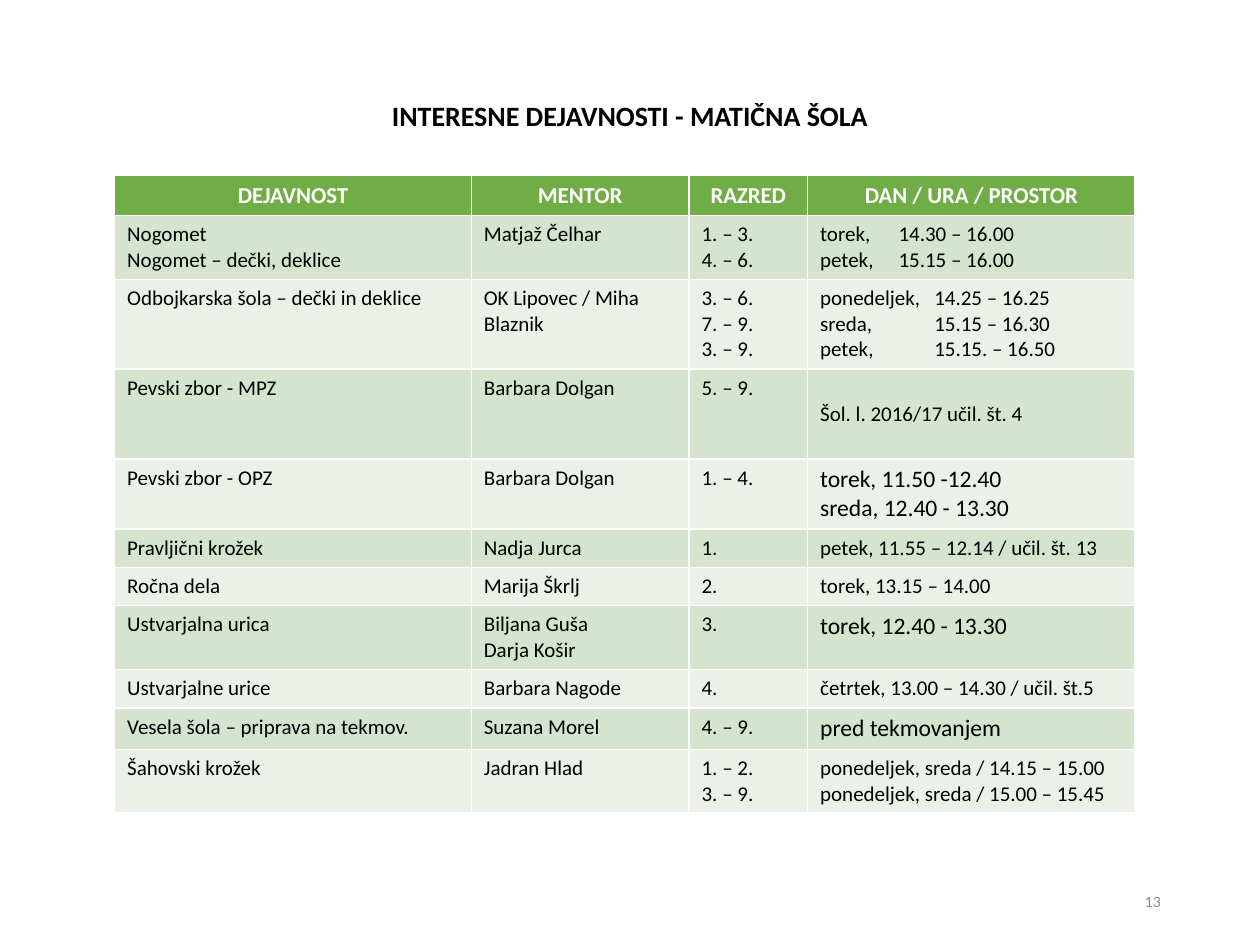
from lxml import etree
from pptx import Presentation, util as u
from pptx.dml.color import RGBColor
from pptx.enum import text
from pptx.oxml.ns import qn

theme = {
    "font": "Calibri",
    "title": {"size": 16, "bold": True, "color": "000000"},
    "header": {"size": 13, "bold": True, "color": "FFFFFF"},
    "body": {"size": 12, "bold": False, "color": "000000"},
    "large": {"size": 13.5, "bold": False, "color": "000000"},
    "number": {"size": 9, "bold": False, "color": "8C8C8C"},
    "header_fill": "70AD47",
    "bands": ["D5E3CF", "EBF1E9"],
}
widths = [7.19, 4.39, 2.39, 6.6]
header = ["DEJAVNOST", "MENTOR", "RAZRED", "DAN / URA / PROSTOR"]
activities = [
    (1.28, "Nogomet\nNogomet – dečki, deklice", "Matjaž Čelhar", "1. – 3.\n4. – 6.",
     "torek,\t14.30 – 16.00\npetek,\t15.15 – 16.00"),
    (1.81, "Odbojkarska šola – dečki in deklice", "OK Lipovec / Miha Blaznik",
     "3. – 6.\n7. – 9.\n3. – 9.",
     "ponedeljek,\t14.25 – 16.25\nsreda,\t15.15 – 16.30\npetek,\t15.15. – 16.50"),
    (1.81, "Pevski zbor - MPZ", "Barbara Dolgan", "5. – 9.", "Šol. l. 2016/17 učil. št. 4"),
    (1.4, "Pevski zbor - OPZ", "Barbara Dolgan", "1. – 4.",
     "torek, 11.50 -12.40\nsreda, 12.40 - 13.30"),
    (0.77, "Pravljični krožek", "Nadja Jurca", "1.", "petek, 11.55 – 12.14 / učil. št. 13"),
    (0.77, "Ročna dela", "Marija Škrlj", "2.", "torek, 13.15 – 14.00"),
    (1.29, "Ustvarjalna urica", "Biljana Guša\nDarja Košir", "3.", "torek, 12.40 - 13.30"),
    (0.77, "Ustvarjalne urice", "Barbara Nagode", "4.", "četrtek, 13.00 – 14.30 / učil. št.5"),
    (0.83, "Vesela šola – priprava na tekmov.", "Suzana Morel", "4. – 9.", "pred tekmovanjem"),
    (1.28, "Šahovski krožek", "Jadran Hlad", "1. – 2.\n3. – 9.",
     "ponedeljek, sreda / 14.15 – 15.00\nponedeljek, sreda / 15.00 – 15.45"),
]
large_times = {"Pevski zbor - OPZ", "Ustvarjalna urica", "Vesela šola – priprava na tekmov."}
time_tabs = {"Nogomet\nNogomet – dečki, deklice": 1.58,
             "Odbojkarska šola – dečki in deklice": 2.3}


def write(tf, content, style, align, tab=None):
    for i, line in enumerate(content.split("\n")):
        p = tf.add_paragraph() if i else tf.paragraphs[0]
        p.alignment = align
        if tab:
            stops = etree.SubElement(p._p.get_or_add_pPr(), qn("a:tabLst"))
            etree.SubElement(stops, qn("a:tab"), pos=str(u.Cm(tab)), algn="l")
        r = p.add_run()
        r.text = line
        look = theme[style]
        formats = {"name": theme["font"], "size": u.Pt(look["size"]), "bold": look["bold"]}
        for name, value in formats.items():
            setattr(r.font, name, value)
        r.font.color.rgb = RGBColor.from_string(look["color"])


prs = Presentation()
prs.slide_width, prs.slide_height = u.Cm(25.4), u.Cm(19.05)
s = prs.slides.add_slide(prs.slide_layouts[5])

title = s.shapes.title
place = {"left": 1.75, "top": 1.93, "width": 21.9, "height": 1.12}
for name, value in place.items():
    setattr(title, name, u.Cm(value))
tf = title.text_frame
frame = {"word_wrap": True, "auto_size": text.MSO_AUTO_SIZE.NONE,
         "vertical_anchor": text.MSO_ANCHOR.TOP}
for name, value in frame.items():
    setattr(tf, name, value)
write(tf, "INTERESNE DEJAVNOSTI - MATIČNA ŠOLA", "title", text.PP_ALIGN.CENTER)
tf.paragraphs[0].line_spacing = 0.9

rows = [(0.79, *header), *activities]
heights = [row[0] for row in rows]
table = s.shapes.add_table(len(rows), len(widths), u.Cm(2.31), u.Cm(3.53),
                           u.Cm(sum(widths)), u.Cm(sum(heights))).table
for column, width in zip(table.columns, widths):
    column.width = u.Cm(width)
for i, (height, *cells) in enumerate(rows):
    table.rows[i].height = u.Cm(height)
    activity = cells[0]
    for j, content in enumerate(cells):
        cell = table.cell(i, j)
        is_time = i > 0 and j == 3
        style = "header" if i == 0 else "large" if is_time and activity in large_times else "body"
        align = text.PP_ALIGN.LEFT if i else text.PP_ALIGN.CENTER
        write(cell.text_frame, content, style, align, time_tabs.get(activity) if is_time else None)
        cell.fill.solid()
        fill = theme["bands"][(i - 1) % 2] if i else theme["header_fill"]
        cell.fill.fore_color.rgb = RGBColor.from_string(fill)
        if is_time and activity == "Pevski zbor - MPZ":
            cell.vertical_anchor = text.MSO_ANCHOR.MIDDLE

number = s.shapes.add_textbox(u.Cm(17.93), u.Cm(17.65), u.Cm(5.72), u.Cm(1.02))
tf = number.text_frame
tf.word_wrap = True
tf.vertical_anchor = text.MSO_ANCHOR.MIDDLE
write(tf, "13", "number", text.PP_ALIGN.RIGHT)

prs.save("out.pptx")
